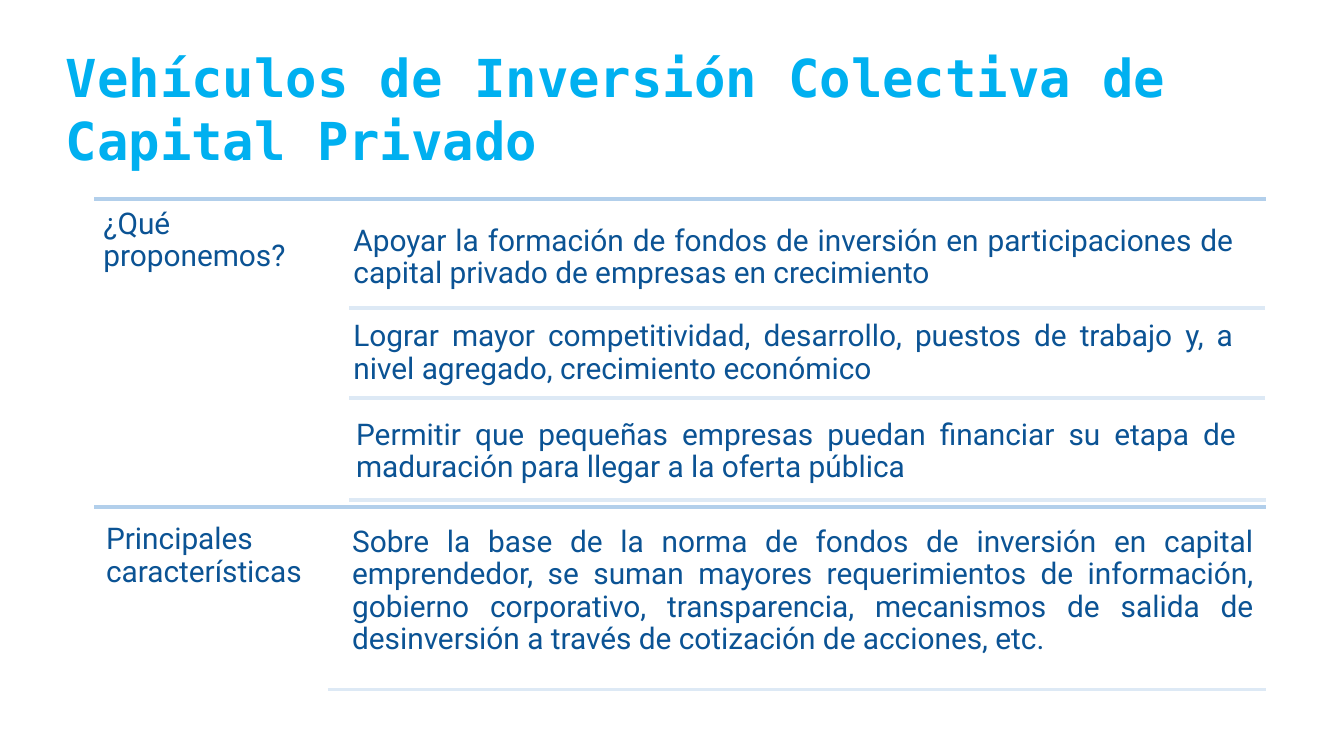
import pptx
import pptx.util
import pptx.dml.color
import pptx.enum.shapes
import pptx.enum.text
import lxml.etree

Inches, Pt = pptx.util.Inches, pptx.util.Pt
RGBColor = pptx.dml.color.RGBColor
ALIGN = pptx.enum.text.PP_ALIGN
ANCHOR = pptx.enum.text.MSO_ANCHOR

TITLE_BLUE = RGBColor(0x00, 0xB0, 0xF0)
TEXT_BLUE = RGBColor(0x0B, 0x53, 0x94)
SECTION_RULE = RGBColor(0xB2, 0xCF, 0xEB)
ITEM_RULE = RGBColor(0xDD, 0xE9, 0xF5)

TITLE_FONT = {"name": "DejaVu Sans Mono", "size": Pt(28), "bold": True}
BODY_FONT = {"name": "Roboto", "size": Pt(16), "bold": False}


def write(tf, text, font, color, align, inset):
    frame = {"word_wrap": True, "auto_size": pptx.enum.text.MSO_AUTO_SIZE.NONE,
             "vertical_anchor": ANCHOR.TOP}
    for side in ("left", "top", "right", "bottom"):
        frame["margin_" + side] = Inches(inset)
    for key, value in frame.items():
        setattr(tf, key, value)
    p = tf.paragraphs[0]
    p.alignment = align
    r = p.add_run()
    r.text = text
    for key, value in font.items():
        setattr(r.font, key, value)
    r.font.color.rgb = color
    return p


prs = pptx.Presentation()
prs.slide_width = Inches(10)
prs.slide_height = prs.slide_width * 9 // 16
s = prs.slides.add_slide(prs.slide_layouts[5])

title = s.shapes.title
title.left, title.top = Inches(0.39), Inches(0.24)
title.width, title.height = Inches(9.03), Inches(0.67)
write(title.text_frame, "Vehículos de Inversión Colectiva de Capital Privado",
      TITLE_FONT, TITLE_BLUE, ALIGN.LEFT, 0.1)

# Rules: left end, right end, height on the slide, colour
rules = [
    (0.7, 9.42, 1.48, SECTION_RULE),
    (2.6, 9.41, 2.29, ITEM_RULE),
    (2.6, 9.41, 2.96, ITEM_RULE),
    (2.6, 9.42, 3.72, ITEM_RULE),
    (0.7, 9.42, 3.77, SECTION_RULE),
    (2.44, 9.42, 5.13, ITEM_RULE),
]
for left, right, y, color in rules:
    rule = s.shapes.add_connector(pptx.enum.shapes.MSO_CONNECTOR.STRAIGHT,
                                  Inches(left), Inches(y), Inches(right), Inches(y))
    rule.line.color.rgb = color
    rule.line.width = Pt(2)
    lxml.etree.SubElement(rule._element.spPr, pptx.oxml.ns.qn("a:effectLst"))

# Texts: left, top, width, height, alignment, wording
texts = [
    (0.7, 1.48, 1.9, 2.15, ALIGN.LEFT, "¿Qué proponemos?"),
    (2.56, 1.61, 6.69, 0.76, ALIGN.JUSTIFY,
     "Apoyar la formación de fondos de inversión en participaciones de "
     "capital privado de empresas en crecimiento"),
    (2.56, 2.32, 6.69, 0.63, ALIGN.JUSTIFY,
     "Lograr mayor competitividad, desarrollo, puestos de trabajo y, a "
     "nivel agregado, crecimiento económico"),
    (2.58, 3.05, 6.69, 0.57, ALIGN.JUSTIFY,
     "Permitir que pequeñas empresas puedan financiar su etapa de "
     "maduración para llegar a la oferta pública"),
    (0.72, 3.83, 1.74, 1.33, ALIGN.LEFT, "Principales características"),
    (2.55, 3.85, 6.85, 1.39, ALIGN.JUSTIFY,
     "Sobre la base de la norma de fondos de inversión en capital "
     "emprendedor, se suman mayores requerimientos de información, "
     "gobierno corporativo, transparencia, mecanismos de salida de "
     "desinversión a través de cotización de acciones, etc."),
]
for left, top, width, height, align, text in texts:
    box = s.shapes.add_textbox(Inches(left), Inches(top), Inches(width), Inches(height))
    p = write(box.text_frame, text, BODY_FONT, TEXT_BLUE, align, 0.07)
    p.line_spacing = 0.9

prs.save("out.pptx")
